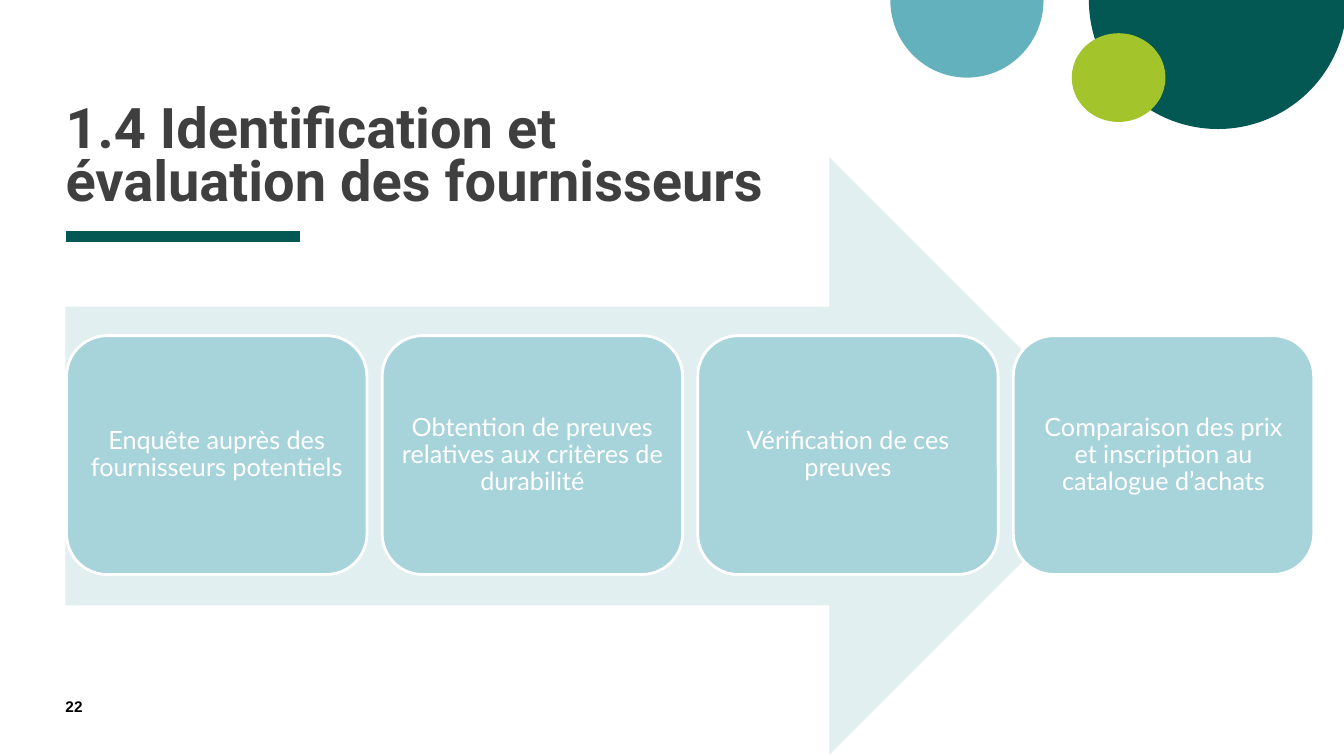
from dataclasses import dataclass

import pptx
import pptx.dml.color
import pptx.enum.shapes
import pptx.enum.text
import pptx.oxml
import pptx.util
from pptx.dml.color import RGBColor
from pptx.enum.shapes import MSO_SHAPE
from pptx.enum.text import MSO_ANCHOR, PP_ALIGN
from pptx.util import Inches

DARK = RGBColor(0x03, 0x58, 0x54)
TEAL = RGBColor(0x64, 0xB1, 0xBE)
LIME = RGBColor(0xA3, 0xC4, 0x2A)
PALE = RGBColor(0xE1, 0xEF, 0xF1)
AQUA = RGBColor(0xA7, 0xD3, 0xDA)
GREY = RGBColor(0x3F, 0x3F, 0x3F)
BLACK = RGBColor(0, 0, 0)
WHITE = RGBColor(0xFF, 0xFF, 0xFF)

LEFT = 0.65
STEP_LEFT, STEP_TOP, STEP_WIDTH, STEP_HEIGHT = 0.66, 3.33, 2.98, 2.37
PITCH = 3.13


@dataclass
class Form:
    kind: MSO_SHAPE
    left: float
    top: float
    width: float
    height: float
    fill: RGBColor
    adjust: tuple[float, ...] = ()


HALF = (0, 108)  # pie from 0 to 180 degrees: the lower half
CIRCLES = [
    Form(MSO_SHAPE.PIE, 10.8, -1.28, 2.56, 2.56, DARK, HALF),
    Form(MSO_SHAPE.PIE, 8.83, -0.77, 1.52, 1.54, TEAL, HALF),
    Form(MSO_SHAPE.OVAL, 10.63, 0.33, 0.93, 0.88, LIME),
]
ARROW = Form(MSO_SHAPE.RIGHT_ARROW, LEFT, 1.56, 10.54, 5.93, PALE, (0.5, 0.5))
STEPS = [
    "Enquête auprès des fournisseurs potentiels",
    "Obtention de preuves relatives aux critères de durabilité",
    "Vérification de ces preuves",
    "Comparaison des prix et inscription au catalogue d’achats",
]


def draw(slide: pptx.slide.Slide, form: Form) -> pptx.shapes.autoshape.Shape:
    shape = slide.shapes.add_shape(
        form.kind, Inches(form.left), Inches(form.top),
        Inches(form.width), Inches(form.height))
    shape.shadow.inherit = False
    shape.fill.solid()
    shape.fill.fore_color.rgb = form.fill
    shape.line.fill.background()
    for index, value in enumerate(form.adjust):
        shape.adjustments[index] = value
    return shape


def write(shape: pptx.shapes.autoshape.Shape, text: str, *, font: str,
          size: float, color: RGBColor, bold: bool = False,
          align: PP_ALIGN = PP_ALIGN.LEFT,
          anchor: MSO_ANCHOR = MSO_ANCHOR.TOP,
          spacing: float = 1.0, inset: float = 0) -> None:
    frame = shape.text_frame
    frame.word_wrap = True
    frame.vertical_anchor = anchor
    frame.margin_left = frame.margin_right = Inches(inset)
    frame.margin_top = frame.margin_bottom = Inches(inset)
    line = frame.paragraphs[0]
    line.text = text
    line.alignment = align
    line.line_spacing = spacing
    line.font.name = font
    line.font.size = pptx.util.Pt(size)
    line.font.bold = bold
    line.font.color.rgb = color


def box(slide: pptx.slide.Slide, left: float, top: float, width: float,
        height: float) -> pptx.shapes.autoshape.Shape:
    return slide.shapes.add_textbox(
        Inches(left), Inches(top), Inches(width), Inches(height))


def rule(slide: pptx.slide.Slide) -> None:
    """Draw the thick line under the title."""
    line = slide.shapes.add_connector(
        pptx.enum.shapes.MSO_CONNECTOR.STRAIGHT,
        Inches(LEFT), Inches(2.35), Inches(2.98), Inches(2.35))
    line.line.color.rgb = DARK
    line.line.width = pptx.util.Pt(8)
    props = line._element.spPr
    props.append(pptx.oxml.parse_xml(
        '<a:effectLst xmlns:a='
        '"http://schemas.openxmlformats.org/drawingml/2006/main"/>'))


def main() -> None:
    deck = pptx.Presentation()
    deck.slide_width, deck.slide_height = Inches(13.33), Inches(7.5)
    slide = deck.slides.add_slide(deck.slide_layouts[6])

    for circle in CIRCLES:
        draw(slide, circle)
    rule(slide)
    write(box(slide, LEFT, 0.37, 7.42, 1.74),
          "1.4 Identification et évaluation des fournisseurs",
          font="Roboto", size=40, color=GREY, bold=True,
          anchor=MSO_ANCHOR.BOTTOM, spacing=0.8)
    write(box(slide, LEFT, 6.92, 0.57, 0.27), "22",
          font="Arial", size=11, color=BLACK, bold=True)

    draw(slide, ARROW)
    for index, text in enumerate(STEPS):
        step = draw(slide, Form(
            MSO_SHAPE.ROUNDED_RECTANGLE, STEP_LEFT + index * PITCH, STEP_TOP,
            STEP_WIDTH, STEP_HEIGHT, AQUA, (0.17,)))
        step.line.color.rgb = WHITE
        step.line.width = pptx.util.Pt(2)
        write(step, text, font="Lato", size=18, color=WHITE,
              align=PP_ALIGN.CENTER, anchor=MSO_ANCHOR.MIDDLE,
              spacing=0.9, inset=0.07)

    deck.save("out.pptx")


if __name__ == "__main__":
    main()
